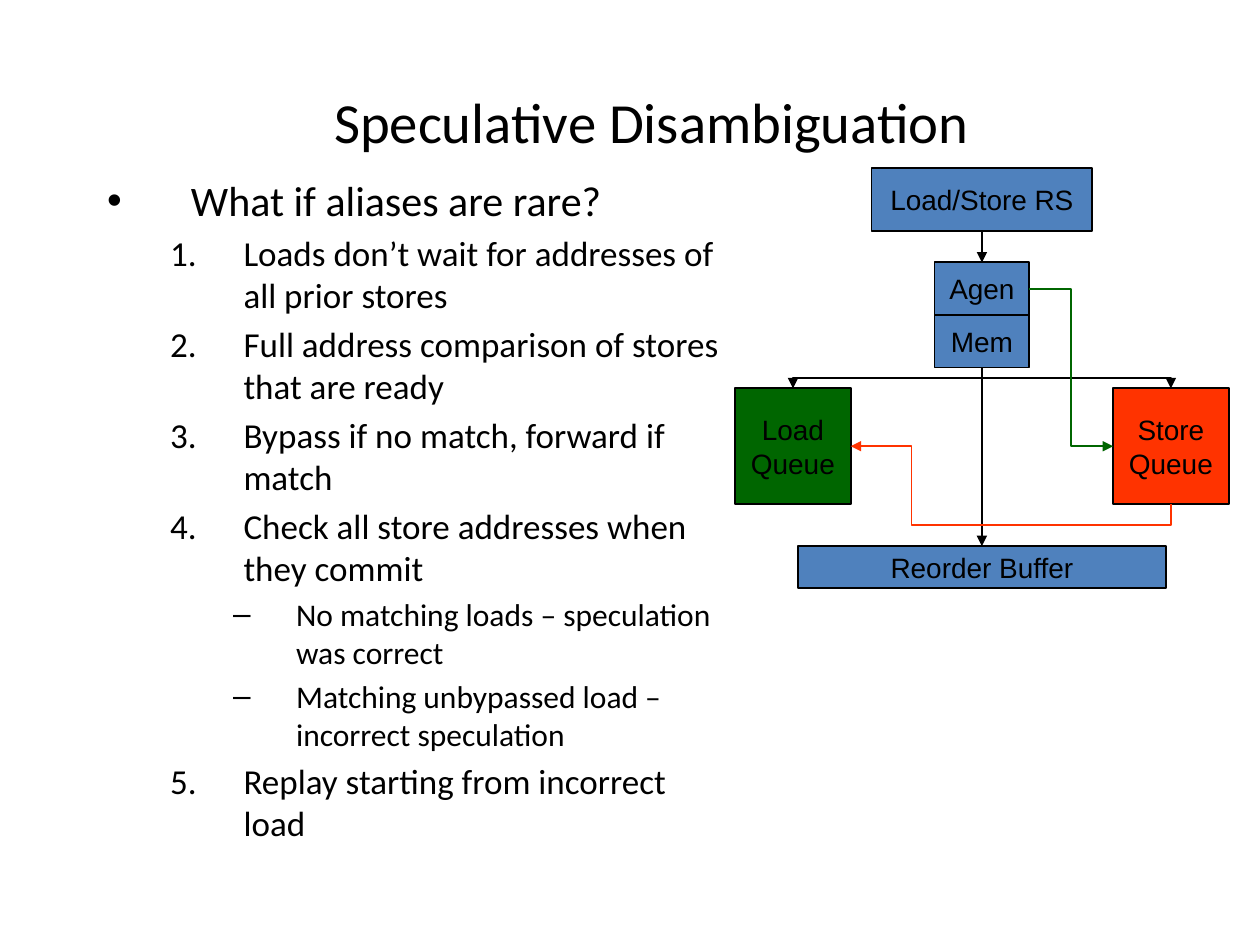
"""Build the slide on speculative disambiguation of loads and stores."""
import pptx
import pptx.dml.color
import pptx.enum.shapes
import pptx.enum.text
import pptx.oxml.ns
import pptx.oxml.xmlchemy
import pptx.util
from lxml import etree

Cm = pptx.util.Cm
Pt = pptx.util.Pt
qn = pptx.oxml.ns.qn

BLACK, BLUE, GREEN, RED = "000000", "4F81BD", "006600", "FF3300"
TITLE = "Speculative Disambiguation"
LEVELS = [
    {"size": 24, "left": 1.69, "hang": 1.69, "tag": "a:buChar", "mark": {"char": "•"}},
    {"size": 20, "left": 2.75, "hang": 1.48, "tag": "a:buAutoNum", "mark": {"type": "arabicPeriod"}},
    {"size": 18, "left": 3.81, "hang": 1.27, "tag": "a:buChar", "mark": {"char": "–"}},
]
POINTS = [
    (0, "What if aliases are rare?"),
    (1, "Loads don’t wait for addresses of all prior stores"),
    (1, "Full address comparison of stores that are ready"),
    (1, "Bypass if no match, forward if match"),
    (1, "Check all store addresses when they commit"),
    (2, "No matching loads – speculation was correct"),
    (2, "Matching unbypassed load – incorrect speculation"),
    (1, "Replay starting from incorrect load"),
]
BLOCKS = {
    "load queue": (["Load", "Queue"], GREEN, (14.82, 7.83, 2.33, 2.33)),
    "store queue": (["Store", "Queue"], RED, (22.44, 7.83, 2.33, 2.33)),
    "stations": (["Load/Store RS"], BLUE, (17.57, 3.39, 4.45, 1.27)),
    "agen": (["Agen"], BLUE, (18.84, 5.29, 1.91, 1.06)),
    "reorder": (["Reorder Buffer"], BLUE, (16.09, 11.01, 7.41, 0.85)),
    "mem": (["Mem"], BLUE, (18.84, 6.35, 1.91, 1.06)),
}
SIDES = {"top": (0.5, 0), "bottom": (0.5, 1), "left": (0, 0.5), "right": (1, 0.5)}
ARROWS = [
    ("stations", "bottom", "agen", "top", BLACK, "line", 0, "", []),
    ("mem", "bottom", "reorder", "top", BLACK, "line", 0, "", []),
    ("mem", "bottom", "store queue", "top", BLACK, "bentConnector3", 270, "flipH", [0.5]),
    ("mem", "bottom", "load queue", "top", BLACK, "bentConnector3", 90, "", [0.5]),
    ("store queue", "bottom", "load queue", "right", RED, "bentConnector4", 270, "flipV", [-0.36, 0.81]),
    ("agen", "right", "store queue", "left", GREEN, "bentConnector3", 0, "", [0.5]),
]


def color(value):
    return pptx.dml.color.RGBColor.from_string(value)


def add_span(para, text, size, font):
    span = para.add_run()
    span.text = text
    span.font.size = Pt(size)
    span.font.name = font
    span.font.color.rgb = color(BLACK)


def add_text_box(page, area):
    box = page.shapes.add_textbox(*map(Cm, area))
    box.text_frame.word_wrap = True
    return box.text_frame


def next_para(frame, index):
    return frame.add_paragraph() if index else frame.paragraphs[0]


def add_title(page):
    frame = add_text_box(page, (1.91, 1.7, 22.45, 1.47))
    frame.vertical_anchor = pptx.enum.text.MSO_ANCHOR.MIDDLE
    para = frame.paragraphs[0]
    para.alignment = pptx.enum.text.PP_ALIGN.CENTER
    add_span(para, TITLE, 32.4, "Calibri")


def add_points(page):
    frame = add_text_box(page, (1.91, 3.39, 13.13, 13.97))
    for index, (depth, text) in enumerate(POINTS):
        level = LEVELS[depth]
        para = next_para(frame, index)
        para.level = depth
        para.space_before = Pt(level["size"] * 0.2 if index else 0)
        settings = para._p.get_or_add_pPr()
        settings.set("marL", str(Cm(level["left"])))
        settings.set("indent", str(-Cm(level["hang"])))
        etree.SubElement(settings, qn("a:buFont"), typeface="Arial" if depth != 1 else "Calibri")
        etree.SubElement(settings, qn(level["tag"]), level["mark"])
        add_span(para, text, level["size"], "Calibri")


def add_block(page, lines, fill, area):
    box = page.shapes.add_shape(pptx.enum.shapes.MSO_SHAPE.RECTANGLE, *map(Cm, area))
    box.shadow.inherit = False
    box.fill.solid()
    box.fill.fore_color.rgb = color(fill)
    box.line.color.rgb = color(BLACK)
    box.line.width = Pt(1)
    frame = box.text_frame
    frame.word_wrap = False
    frame.vertical_anchor = pptx.enum.text.MSO_ANCHOR.MIDDLE
    for index, line in enumerate(lines):
        para = next_para(frame, index)
        para.alignment = pptx.enum.text.PP_ALIGN.CENTER
        add_span(para, line, 16, "Arial")


def anchor(name, side):
    left, top, width, height = BLOCKS[name][2]
    across, down = SIDES[side]
    return left + width * across, top + height * down


def add_arrow(page, source, exit_side, target, entry_side, stroke, preset, turn, flip, bends):
    x1, y1 = anchor(source, exit_side)
    x2, y2 = anchor(target, entry_side)
    if preset == "line":
        x2 = x1
    width, height = abs(x2 - x1), abs(y2 - y1)
    if turn:
        width, height = height, width
    left, top = (x1 + x2 - width) / 2, (y1 + y2 - height) / 2
    kind = pptx.enum.shapes.MSO_CONNECTOR
    arrow = page.shapes.add_connector(
        kind.STRAIGHT if preset == "line" else kind.ELBOW,
        Cm(left), Cm(top), Cm(left + width), Cm(top + height))
    arrow.line.color.rgb = color(stroke)
    arrow.line.width = Pt(1)
    etree.SubElement(arrow.line._get_or_add_ln(), qn("a:tailEnd"), type="triangle")
    properties = arrow._element.spPr
    etree.SubElement(properties, qn("a:effectLst"))
    frame = properties.find(qn("a:xfrm"))
    if turn:
        frame.set("rot", str(turn * 60000))
    if flip:
        frame.set(flip, "1")
    geometry = properties.find(qn("a:prstGeom"))
    geometry.set("prst", preset)
    guides = geometry.find(qn("a:avLst"))
    for number, bend in enumerate(bends, 1):
        etree.SubElement(guides, qn("a:gd"), name=f"adj{number}" if preset != "line" else "adj",
                         fmla=f"val {round(bend * 100000)}")


def main():
    deck = pptx.Presentation()
    deck.slide_width, deck.slide_height = Cm(25.4), Cm(19.05)
    page = deck.slides.add_slide(deck.slide_layouts[6])
    add_title(page)
    add_points(page)
    for block in BLOCKS.values():
        add_block(page, *block)
    for arrow in ARROWS:
        add_arrow(page, *arrow)
    deck.save("out.pptx")


if __name__ == "__main__":
    main()
